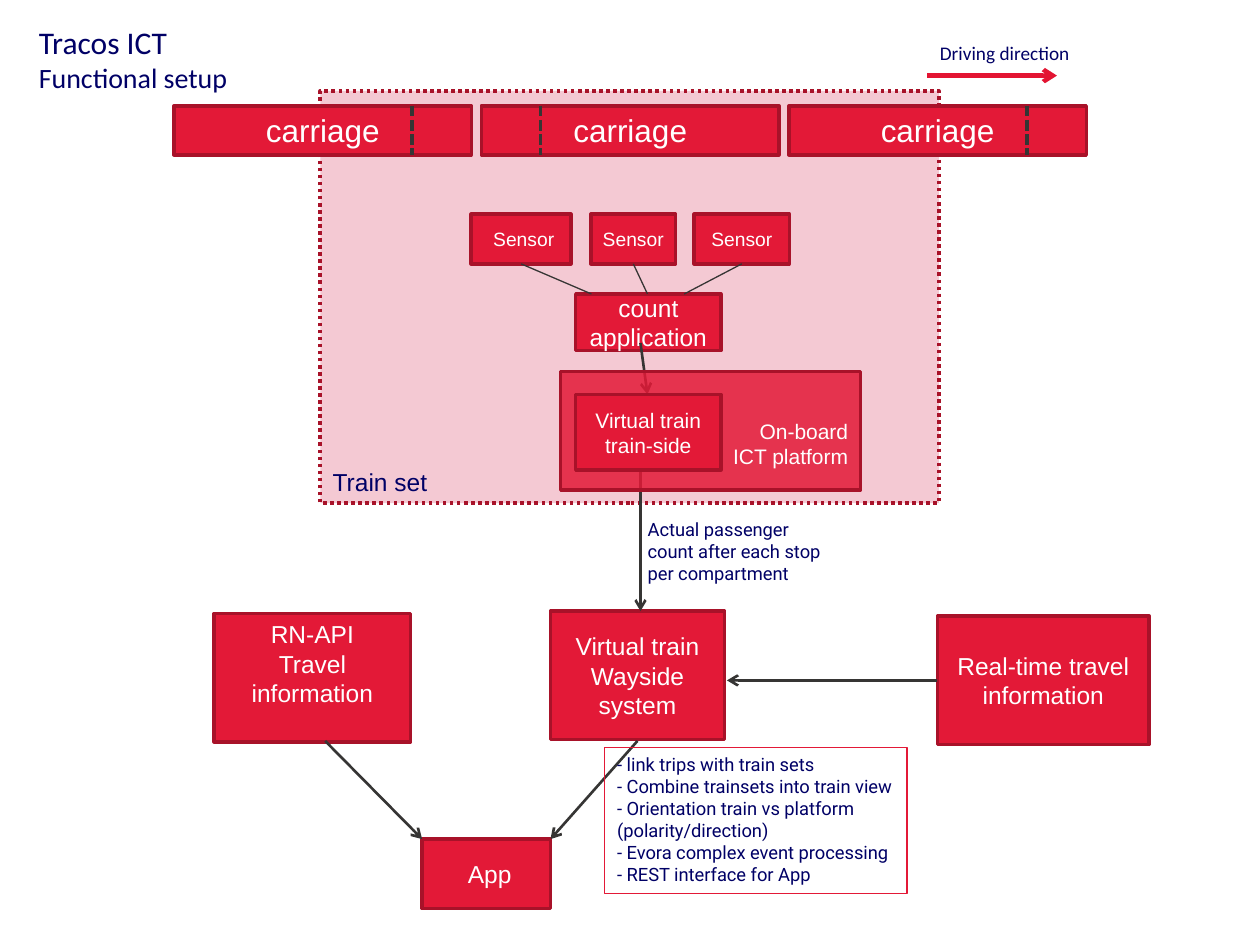
from dataclasses import dataclass
from typing import NamedTuple

from lxml import etree
from pptx import Presentation
from pptx import util as u
from pptx.dml.color import RGBColor
from pptx.enum import dml, shapes, text as txt
from pptx.oxml.ns import qn

Pt = u.Pt


@dataclass(frozen=True)
class Theme:
    red: str = "E31937"
    dark_red: str = "A81229"
    arrow_red: str = "E31432"
    pink: str = "F4C9D3"
    navy: str = "000066"
    white: str = "FFFFFF"
    charcoal: str = "363534"
    box_font: str = "Arial"
    title_font: str = "Calibri"
    note_font: str = "Roboto"
    title: float = 18
    subtitle: float = 16
    large: float = 18
    body: float = 14
    medium: float = 12
    small: float = 11
    note: float = 10.5
    border: float = 2
    flow: float = 1.5
    thin: float = 0.75


class Area(NamedTuple):
    left: float
    top: float
    width: float
    height: float


class Box(NamedTuple):
    label: str
    area: Area
    size: float = 14
    insets: tuple = (7.2, 3.6, 7.2, 3.6)


class Link(NamedTuple):
    start: tuple
    end: tuple
    width: float = 1.5
    color: str = "363534"
    arrow: bool = True
    dash: dml.MSO_LINE | None = None


THEME = Theme()
ALIGN, ANCHOR = txt.PP_ALIGN, txt.MSO_ANCHOR


def write(frame, content: str, *, sizes=(14,), font=THEME.box_font, color=THEME.white,
          align=ALIGN.CENTER, anchor=ANCHOR.MIDDLE, insets=(7.2, 3.6, 7.2, 3.6)) -> None:
    """Fill a frame, one paragraph a line; the last of sizes serves all later lines."""
    frame.text = content
    frame.word_wrap = True
    frame.auto_size = txt.MSO_AUTO_SIZE.NONE
    frame.vertical_anchor = anchor
    frame.margin_left, frame.margin_top, frame.margin_right, frame.margin_bottom = map(Pt, insets)
    for number, paragraph in enumerate(frame.paragraphs):
        paragraph.alignment = align
        paragraph.font.size = Pt(sizes[min(number, len(sizes) - 1)])
        paragraph.font.name = font
        paragraph.font.color.rgb = RGBColor.from_string(color)


def add_panel(slide, area: Area, *, fill: str | None = THEME.red, border=THEME.dark_red,
              width=THEME.border, dash=None, opacity: int | None = None):
    panel = slide.shapes.add_shape(shapes.MSO_SHAPE.RECTANGLE, *map(Pt, area))
    panel.shadow.inherit = False
    if fill:
        panel.fill.solid()
        panel.fill.fore_color.rgb = RGBColor.from_string(fill)
    else:
        panel.fill.background()
    if opacity is not None:
        color = panel.fill._xPr.find(qn("a:solidFill")).find(qn("a:srgbClr"))
        etree.SubElement(color, qn("a:alpha")).set("val", str(opacity * 1000))
    panel.line.color.rgb = RGBColor.from_string(border)
    panel.line.width = Pt(width)
    if dash:
        panel.line.dash_style = dash
    return panel


def add_box(slide, box: Box) -> None:
    write(add_panel(slide, box.area).text_frame, box.label, sizes=(box.size,), insets=box.insets)


def add_link(slide, link: Link) -> None:
    line = slide.shapes.add_connector(
        shapes.MSO_CONNECTOR.STRAIGHT, *map(Pt, (*link.start, *link.end)))
    line.line.color.rgb = RGBColor.from_string(link.color)
    line.line.width = Pt(link.width)
    if link.dash:
        line.line.dash_style = link.dash
    properties = line._element.spPr
    if link.arrow:
        etree.SubElement(properties.find(qn("a:ln")), qn("a:tailEnd")).set("type", "arrow")
    etree.SubElement(properties, qn("a:effectLst"))


def add_label(slide, area: Area, content: str, size: float, font: str) -> None:
    label = slide.shapes.add_textbox(*map(Pt, area))
    write(label.text_frame, content, sizes=(size,), font=font, color=THEME.navy,
          align=ALIGN.LEFT, anchor=ANCHOR.TOP)


def add_title(slide) -> None:
    title = slide.shapes.title
    title.left, title.top, title.width, title.height = map(Pt, (15, 9.4, 140.4, 48.2))
    write(title.text_frame, "Tracos ICT\nFunctional setup", sizes=(THEME.title, THEME.subtitle),
          font=THEME.title_font, color=THEME.navy, align=ALIGN.LEFT, anchor=ANCHOR.TOP)


def add_train(slide) -> None:
    train_set = add_panel(slide, Area(183, 52, 353.5, 235.5), fill=THEME.pink,
                          dash=dml.MSO_LINE.ROUND_DOT)
    write(train_set.text_frame, "Train set", sizes=(THEME.body,), color=THEME.navy,
          align=ALIGN.LEFT, anchor=ANCHOR.BOTTOM)

    top, height = 60.5, 28
    for number in range(3):
        add_box(slide, Box("carriage", Area(99.4 + 175.7 * number, top, 170, height), THEME.large))
    for divider in (235.4, 308.9, 586.8):
        add_link(slide, Link((divider, top), (divider, top + height), THEME.border,
                             arrow=False, dash=dml.MSO_LINE.SQUARE_DOT))

    add_link(slide, Link((530, 43.2), (604, 43.2), 2.5, THEME.arrow_red))
    add_label(slide, Area(530, 20.2, 119, 20.9), "Driving direction",
              THEME.small, THEME.title_font)


def add_counting(slide) -> None:
    tight = (1.4,) * 4
    count_top = 168
    add_box(slide, Box("count application", Area(329, count_top, 83, 32.4), THEME.body, tight))
    sensors = ((269.3, 57, 338, 4.4), (337.7, 48.4, 370, 1.4), (396.7, 54.4, 391, 1.4))
    for left, width, target, left_inset in sensors:
        area = Area(left, 122.4, width, 28.4)
        add_box(slide, Box("Sensor", area, THEME.small, (left_inset, *tight[1:])))
        add_link(slide, Link((left + width / 2, area.top + area.height), (target, count_top),
                             THEME.thin, arrow=False))


def add_systems(slide) -> None:
    for box in (
        Box("Virtual train\nWayside system", Area(314.6, 349.2, 99.4, 73.4)),
        Box("Real-time travel information", Area(535.7, 352.1, 121, 73.4)),
        Box("RN-API\nTravel information", Area(122.4, 350.6, 112.3, 73.4),
            insets=(7.2, 3.6, 7.2, 20)),
        Box("App", Area(241.2, 479.5, 73.4, 39.6), insets=(11, 3.6, 7.2, 3.6)),
    ):
        add_box(slide, box)
    for link in (
        Link((366, 263.5), (366, 349.2)),
        Link((535.7, 388.8), (415.4, 388.8)),
        Link((185.8, 423.4), (241.2, 479.5)),
        Link((364.3, 423.4), (314.6, 479.5)),
        Link((366, 196), (370, 225.4)),
    ):
        add_link(slide, link)
    add_label(slide, Area(363, 292.3, 119, 45.4),
              "Actual passenger count after each stop per compartment",
              THEME.note, THEME.note_font)


def add_platform(slide) -> None:
    platform = add_panel(slide, Area(320.4, 212.4, 171.4, 67.7), opacity=85)
    write(platform.text_frame, "On-board\nICT platform", sizes=(THEME.medium,),
          align=ALIGN.RIGHT, insets=(7.2, 18, 7.2, 3.6))
    add_box(slide, Box("Virtual train train-side", Area(329, 225.4, 83, 43.2), THEME.medium))


def add_wayside_tasks(slide) -> None:
    tasks = ("link trips with train sets", "Combine trainsets into train view",
             "Orientation train vs platform (polarity/direction)",
             "Evora complex event processing", "REST interface for App")
    panel = add_panel(slide, Area(345.6, 427, 172.8, 83.5), fill=None, border=THEME.red,
                      width=THEME.thin)
    write(panel.text_frame, "\n".join(f"- {task}" for task in tasks), sizes=(THEME.note,),
          font=THEME.note_font, color=THEME.navy, align=ALIGN.LEFT, anchor=ANCHOR.TOP,
          insets=(7.2, 3.6, 0, 3.6))


def main() -> None:
    deck = Presentation()
    deck.slide_width, deck.slide_height = Pt(720), Pt(540)
    slide = deck.slides.add_slide(deck.slide_layouts.get_by_name("Title Only"))
    for add_part in (add_title, add_train, add_counting, add_systems, add_platform,
                     add_wayside_tasks):
        add_part(slide)
    deck.save("out.pptx")


if __name__ == "__main__":
    main()
